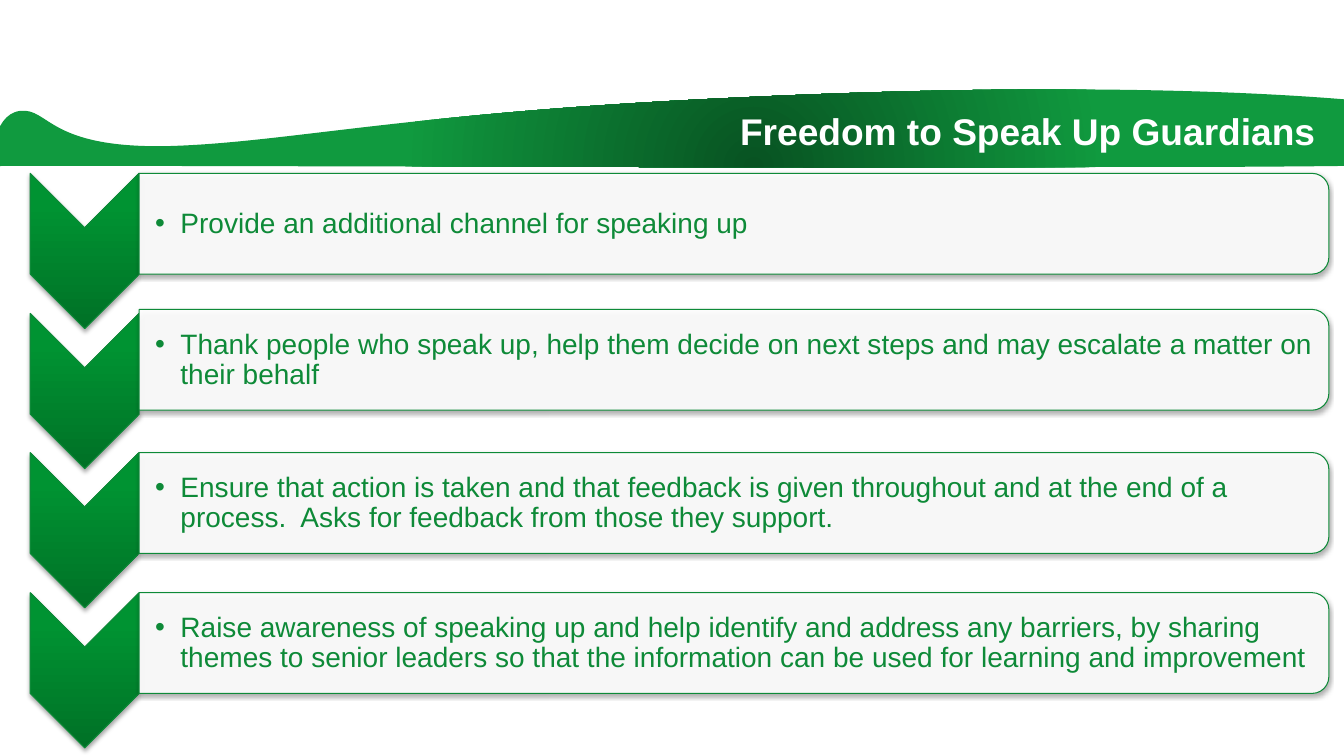
from dataclasses import dataclass

import pptx
import pptx.dml.color
import pptx.enum.shapes
import pptx.enum.text
import pptx.oxml
import pptx.oxml.ns
import pptx.util

PX = 9144  # 100 px to the inch
SHAPES = pptx.enum.shapes.MSO_SHAPE
NAMESPACE = pptx.oxml.ns.nsdecls("a")


@dataclass(frozen=True)
class Theme:
    font: str = "Arial"
    green: str = "0E8A38"
    white: str = "FFFFFF"
    shadow: str = "000000"
    title_size: float = 26.5
    body_size: float = 20
    line_width: float = 0.75
    band_stops: tuple = ((0, "7DF2A5"), (0, "085322"), (46, "109A3F"))
    chevron_stops: tuple = ((0, "007126"), (80, "009332"), (100, "009432"))


BAND_AREA = (-10, 88, 1515, 78)
BAND_START = (1371, 102)
BAND_CURVES = [
    ((1263, 91), (1058, 81), (728, 97)),
    ((399, 112), (283, 142), (165, 145)),
    ((47, 147), (49, 107), (20, 110)),
    ((-10, 114), (-7, 166), (-10, 165)),
    ((-16, 163), (1135, 169), (1372, 164)),
    ((1609, 159), (1478, 113), (1371, 102)),
]
BAND_SHADE = ('<a:path path="circle"><a:fillToRect l="50000" t="130000" '
              'r="50000" b="-30000"/></a:path>')
CHEVRON_SHADE = '<a:lin ang="16200000" scaled="0"/>'

DUTIES = [
    (172, "Provide an additional channel for speaking up"),
    (307, "Thank people who speak up, help them decide on next steps and may "
          "escalate a matter on their behalf"),
    (449, "Ensure that action is taken and that feedback is given throughout and "
          "at the end of a process.  Asks for feedback from those they support."),
    (588, "Raise awareness of speaking up and help identify and address any "
          "barriers, by sharing themes to senior leaders so that the information "
          "can be used for learning and improvement"),
]
FIRST_CHEVRON, LAST_CHEVRON = 172, 588


def colour(value):
    return pptx.dml.color.RGBColor.from_string(value)


def set_values(target, values):
    for name, value in values.items():
        setattr(target, name, value)


class SlideBuilder:
    def __init__(self, slide, theme):
        self.slide = slide
        self.theme = theme

    def gradient(self, shape, stops, shade):
        shape.fill.gradient()
        stop_xml = "".join(
            f'<a:gs pos="{position * 1000}"><a:srgbClr val="{value}"/></a:gs>'
            for position, value in stops)
        properties = shape.element.spPr
        properties.replace(
            properties.find(pptx.oxml.ns.qn("a:gradFill")),
            pptx.oxml.parse_xml(f'<a:gradFill {NAMESPACE} rotWithShape="0">'
                                f'<a:gsLst>{stop_xml}</a:gsLst>{shade}</a:gradFill>'))

    def band(self, area, start, curves):
        """Add a freeform over the area and bend its outline along cubic curves."""
        left, top, width, height = area
        right, bottom = left + width, top + height
        builder = self.slide.shapes.build_freeform(left, top, scale=PX)
        builder.add_line_segments([(right, top), (right, bottom), (left, bottom)])
        shape = builder.convert_to_shape()

        def points(*corners):
            return "".join(f'<a:pt x="{x - left}" y="{y - top}"/>' for x, y in corners)

        bends = "".join(f"<a:cubicBezTo>{points(*curve)}</a:cubicBezTo>"
                        for curve in curves)
        outline = shape.element.spPr.find(".//" + pptx.oxml.ns.qn("a:path"))
        outline.getparent().replace(outline, pptx.oxml.parse_xml(
            f'<a:path {NAMESPACE} w="{width}" h="{height}">'
            f'<a:moveTo>{points(start)}</a:moveTo>{bends}<a:close/></a:path>'))
        shape.shadow.inherit = False
        shape.line.fill.background()
        self.gradient(shape, self.theme.band_stops, BAND_SHADE)

    def turned_shape(self, kind, left, top, width, height):
        """Add an outlined shape turned by 90 degrees that covers the given area."""
        shift = (width - height) // 2
        shape = self.slide.shapes.add_shape(
            kind, (left + shift) * PX, (top - shift) * PX, height * PX, width * PX)
        shape.rotation = 90
        shape.line.color.rgb = colour(self.theme.green)
        shape.line.width = pptx.util.Pt(self.theme.line_width)
        shape.shadow.inherit = False
        effects = shape.element.spPr.find(pptx.oxml.ns.qn("a:effectLst"))
        effects.append(pptx.oxml.parse_xml(
            f'<a:outerShdw {NAMESPACE} blurRad="40000" dist="23000" dir="5400000" '
            f'rotWithShape="0"><a:srgbClr val="{self.theme.shadow}">'
            '<a:alpha val="35000"/></a:srgbClr></a:outerShdw>'))
        return shape

    def chevron(self, left, top, width, height):
        shape = self.turned_shape(SHAPES.CHEVRON, left, top, width, height)
        self.gradient(shape, self.theme.chevron_stops, CHEVRON_SHADE)

    def panel(self, left, top, width, height):
        shape = self.turned_shape(SHAPES.ROUND_2_SAME_RECTANGLE, left, top, width, height)
        shape.fill.solid()
        shape.fill.fore_color.rgb = colour(self.theme.white)
        fill_colour = shape.element.spPr.find(
            pptx.oxml.ns.qn("a:solidFill")).find(pptx.oxml.ns.qn("a:srgbClr"))
        fill_colour.append(pptx.oxml.parse_xml(f'<a:alpha {NAMESPACE} val="90000"/>'))

    def text(self, words, left, top, width, height, insets, size, value, bold=False):
        box = self.slide.shapes.add_textbox(left * PX, top * PX, width * PX, height * PX)
        frame = box.text_frame
        sides = ("margin_left", "margin_top", "margin_right", "margin_bottom")
        set_values(frame, {
            "word_wrap": True,
            "vertical_anchor": pptx.enum.text.MSO_ANCHOR.MIDDLE,
            **{side: inset * PX for side, inset in zip(sides, insets)},
        })
        paragraph = frame.paragraphs[0]
        run = paragraph.add_run()
        run.text = words
        set_values(run.font, {"name": self.theme.font, "bold": bold,
                              "size": pptx.util.Pt(size)})
        run.font.color.rgb = colour(value)
        return paragraph

    def title(self, words):
        self.text(words, 695, 65, 940, 130, (39, 16, 39, 16),
                  self.theme.title_size, self.theme.white, bold=True)

    def bullet(self, words, left, top, width, height):
        paragraph = self.text(words, left, top, width, height, (16, 1, 1, 1),
                              self.theme.body_size, self.theme.green)
        set_values(paragraph, {"level": 1, "line_spacing": 0.9,
                               "space_after": pptx.util.Pt(3)})
        properties = paragraph._p.get_or_add_pPr()
        properties.set("marL", str(25 * PX))
        properties.set("indent", str(-25 * PX))
        for mark in (f'buFont {NAMESPACE} typeface="{self.theme.font}"',
                     f'buChar {NAMESPACE} char="•"'):
            properties.append(pptx.oxml.parse_xml(f"<a:{mark}/>"))


def main():
    presentation = pptx.Presentation()
    presentation.slide_width = 1333 * PX
    presentation.slide_height = 750 * PX
    slide = presentation.slides.add_slide(presentation.slide_layouts[6])
    builder = SlideBuilder(slide, Theme())

    builder.band(BAND_AREA, BAND_START, BAND_CURVES)
    builder.title("Freedom to Speak Up Guardians")
    pitch = (LAST_CHEVRON - FIRST_CHEVRON) / (len(DUTIES) - 1)
    for index, (panel_top, words) in enumerate(DUTIES):
        builder.chevron(30, round(FIRST_CHEVRON + index * pitch), 108, 154)
        builder.panel(138, panel_top, 1180, 100)
        builder.bullet(words, 138, panel_top + 5, 1175, 91)

    presentation.save("out.pptx")


if __name__ == "__main__":
    main()
